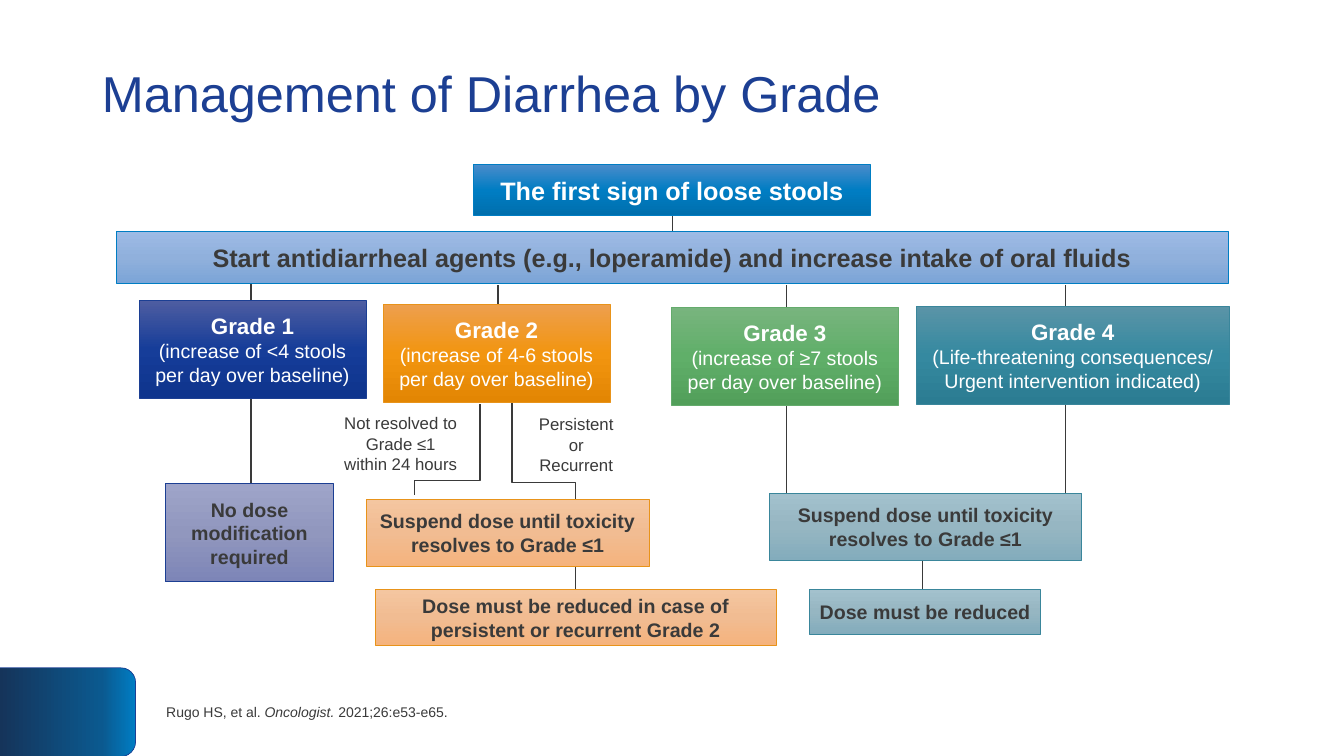
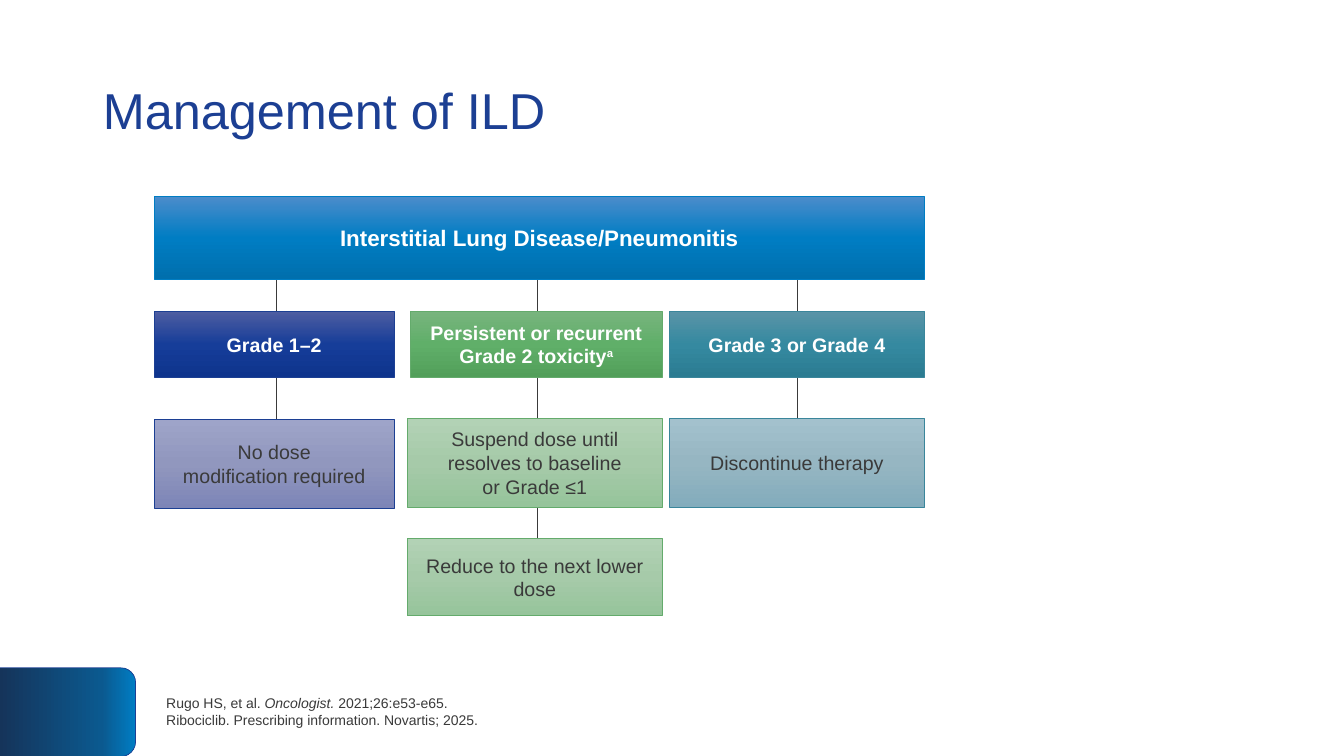
from copy import deepcopy
from dataclasses import dataclass

from lxml.etree import SubElement
from pptx import Presentation
from pptx.dml.color import RGBColor
from pptx.enum.shapes import MSO_CONNECTOR, MSO_SHAPE
from pptx.enum.text import MSO_ANCHOR, MSO_AUTO_SIZE, PP_ALIGN
from pptx.oxml.ns import qn
from pptx.util import Inches, Pt

FONT = "Arial"
HEX = {"title": "1C3F93", "ink": "3A3A3A", "white": "FFFFFF"}

# Each tone: three gradient colours, edge, text
TONES = {
    "blue": ("4B8CCB", "007DC3", "006FAD", "007DC3", HEX["white"]),
    "navy": ("4E5DA1", "163D99", "0E348D", "1C3F93", HEX["white"]),
    "orange": ("ED9F4E", "F29510", "E38603", "E8931A", HEX["white"]),
    "green": ("78B47E", "60AF69", "529F5A", "64AB6C", HEX["white"]),
    "teal": ("5A94A7", "3589A0", "2B7C92", "3A869B", HEX["white"]),
    "pale blue": ("9DBBE5", "90B0DC", "7CA5D7", "007DC3", HEX["ink"]),
    "pale navy": ("9EA4C9", "9197BE", "7D85B7", "1C3F93", HEX["ink"]),
    "pale orange": ("F4C6A0", "F1BC92", "F5B37D", "E8931A", HEX["ink"]),
    "pale green": ("B2D2B5", "A6CAA9", "96C49B", "64AB6C", HEX["ink"]),
    "pale teal": ("A3C1CD", "96B6C2", "83ACBC", "3A869B", HEX["ink"]),
    "band": ("007DC3", "0B598F", "15345A", "1C3F93", HEX["white"]),
}


@dataclass
class Box:
    at: tuple[float, float, float, float]
    tone: str
    text: str
    size: int = 14
    bold: bool = True
    note: str = ""
    sup: str = ""


@dataclass
class Label:
    at: tuple[float, float, float, float]
    text: str


@dataclass
class Wire:
    x: float
    top: float
    end: float


@dataclass
class Elbow:
    start: tuple[float, float]
    end: tuple[float, float]
    bend: float


def place(shape, at: tuple[float, float, float, float]) -> None:
    shape.left, shape.top, shape.width, shape.height = map(Inches, at)


def style(para, size: int, colour: str, bold: bool = False) -> None:
    """Format every run, and give line breaks the same size."""
    for run in para.runs:
        run.font.name = FONT
        run.font.size = Pt(size)
        run.font.bold = bold
        run.font.color.rgb = RGBColor.from_string(colour)
    look = para.runs[0].font
    for gap in para._p.findall(qn("a:br")):
        gap.insert(0, deepcopy(look._rPr))


def paint(shape, tone: str, mid: float = 0.5) -> None:
    *shades, edge, _ = TONES[tone]
    shape.shadow.inherit = False
    fill = shape.fill
    fill.gradient()
    fill.gradient_angle = 270
    stops = shape.element.spPr.find(".//" + qn("a:gsLst"))
    stops.append(deepcopy(stops[0]))
    for stop, spot, shade in zip(fill.gradient_stops, (0, mid, 1), shades):
        stop.position = spot
        stop.color.rgb = RGBColor.from_string(shade)
    shape.line.color.rgb = RGBColor.from_string(edge)
    shape.line.width = Pt(0.5)


def draw_box(slide, box: Box) -> None:
    shape = slide.shapes.add_shape(MSO_SHAPE.RECTANGLE, *map(Inches, box.at))
    paint(shape, box.tone)
    colour = TONES[box.tone][-1]
    frame = shape.text_frame
    frame.word_wrap = True
    frame.vertical_anchor = MSO_ANCHOR.MIDDLE
    frame.text = box.text
    head = frame.paragraphs[0]
    if box.sup:
        run = head.add_run()
        run.text = box.sup
        run.font._element.set("baseline", "30000")
    style(head, box.size, colour, box.bold)
    if box.note:
        note = frame.add_paragraph()
        note.text = box.note
        style(note, 14, colour)
    for para in frame.paragraphs:
        para.alignment = PP_ALIGN.CENTER


def draw_label(slide, label: Label) -> None:
    frame = slide.shapes.add_textbox(*map(Inches, label.at)).text_frame
    frame.word_wrap = False
    frame.auto_size = MSO_AUTO_SIZE.SHAPE_TO_FIT_TEXT
    frame.text = label.text
    frame.paragraphs[0].alignment = PP_ALIGN.CENTER
    style(frame.paragraphs[0], 12, HEX["ink"])


def link(slide, kind, *ends: float):
    line = slide.shapes.add_connector(kind, *map(Inches, ends))
    line.line.color.rgb = RGBColor.from_string(HEX["ink"])
    line.line.width = Pt(1)
    SubElement(line.element.spPr, qn("a:effectLst"))
    return line


def draw_wire(slide, wire: Wire) -> None:
    link(slide, MSO_CONNECTOR.STRAIGHT, wire.x, wire.top, wire.x, wire.end)


def draw_elbow(slide, elbow: Elbow) -> None:
    """Leave downwards, so turn the level-first connector a quarter."""
    (x1, y1), (x2, y2) = elbow.start, elbow.end
    mid_x, mid_y = (x1 + x2) / 2, (y1 + y2) / 2
    half, rise = (y2 - y1) / 2, abs(x2 - x1) / 2
    right = x2 > x1
    if right:
        half = -half
    line = link(slide, MSO_CONNECTOR.ELBOW,
                mid_x - half, mid_y - rise, mid_x + half, mid_y + rise)
    form = line.element.spPr
    form.find(qn("a:xfrm")).set("rot", str((270 if right else 90) * 60000))
    guide = SubElement(form.find(".//" + qn("a:avLst")), qn("a:gd"))
    guide.set("name", "adj1")
    guide.set("fmla", f"val {round(elbow.bend * 100000)}")


DRAW = {Box: draw_box, Label: draw_label, Wire: draw_wire, Elbow: draw_elbow}


def add_slide(deck, title: str, at: tuple[float, float, float, float],
              parts: list, source: str = "") -> None:
    slide = deck.slides.add_slide(deck.slide_layouts[5])

    # Corner band
    band = slide.shapes.add_shape(MSO_SHAPE.ROUND_2_SAME_RECTANGLE,
                                  *map(Inches, (0.23, 6.39, 0.88, 1.35)))
    band.rotation = 90
    paint(band, "band", 0.25)

    # Title
    head = slide.shapes.title
    place(head, at)
    frame = head.text_frame
    frame.text = title
    frame.word_wrap = True
    frame.auto_size = MSO_AUTO_SIZE.NONE
    frame.vertical_anchor = MSO_ANCHOR.MIDDLE
    para = frame.paragraphs[0]
    para.alignment = PP_ALIGN.LEFT
    para.line_spacing = 0.9
    style(para, 36, HEX["title"])

    # Flow chart
    for part in parts:
        DRAW[type(part)](slide, part)

    # Source line
    foot = slide.shapes.add_textbox(*map(Inches, (1.55, 6.62, 11.65, 0.88)))
    frame = foot.text_frame
    frame.word_wrap = True
    frame.vertical_anchor = MSO_ANCHOR.MIDDLE
    para = frame.paragraphs[0]
    for text in ("Rugo HS, et al. ", "Oncologist. ", "2021;26:e53-e65."):
        para.add_run().text = text
    para.runs[1].font.italic = True
    if source:
        para.add_line_break()
        para.add_run().text = source
    style(para, 10, HEX["ink"])


def grade(num: int, at: tuple[float, float, float], tone: str, note: str) -> Box:
    return Box((*at, 0.97), tone, f"Grade {num}", 16, note=note)


def stools(count: str) -> str:
    return f"(increase of {count} stools\vper day over baseline)"


PAUSE = "Suspend dose until toxicity resolves to Grade ≤1"

GUT = [
    # Lines
    Wire(6.67, 2.14, 2.3),
    Wire(2.49, 2.82, 4.8),
    Wire(4.94, 2.83, 3.4),
    Wire(7.8, 2.83, 4.91),
    Wire(10.57, 2.83, 4.91),
    Wire(9.15, 5.39, 5.85),
    Elbow((4.76, 4.01), (4.11, 4.91), 0.84),
    Elbow((5.08, 3.95), (5.71, 5.85), 0.44),
    # First steps
    Box((4.7, 1.63, 3.93, 0.51), "blue", "The first sign of loose stools", 18),
    Box((1.15, 2.3, 11.03, 0.51), "pale blue",
        "Start antidiarrheal agents (e.g., loperamide) and increase intake of oral fluids", 18),
    # Grades
    grade(1, (1.38, 2.98, 2.25), "navy", stools("<4")),
    grade(2, (3.8, 3.02, 2.25), "orange", stools("4-6")),
    grade(3, (6.66, 3.05, 2.25), "green", stools("≥7")),
    grade(4, (9.09, 3.04, 3.1), "teal",
          "(Life-threatening consequences/\vUrgent intervention indicated)"),
    # Branch labels
    Label((3.31, 4.05, 1.33, 0.71), "Not resolved to\vGrade ≤1\vwithin 24 hours"),
    Label((5.24, 4.06, 0.95, 0.71), "Persistent\vor\vRecurrent"),
    # Actions
    Box((1.64, 4.8, 1.67, 0.97), "pale navy", "No dose modification required"),
    Box((3.63, 4.95, 2.81, 0.67), "pale orange", PAUSE),
    Box((3.72, 5.85, 3.98, 0.55), "pale orange",
        "Dose must be reduced in case of persistent or recurrent Grade 2"),
    Box((7.63, 4.89, 3.1, 0.67), "pale teal", PAUSE),
    Box((8.03, 5.85, 2.29, 0.44), "pale teal", "Dose must be reduced"),
]

LUNG = [
    # Lines
    Wire(2.74, 2.75, 4.54),
    Wire(5.33, 2.75, 5.7),
    Wire(7.91, 2.75, 4.76),
    # Heading and grades
    Box((1.53, 1.95, 7.64, 0.82), "blue", "Interstitial Lung Disease/Pneumonitis", 16),
    Box((1.53, 3.09, 2.38, 0.65), "navy", "Grade 1–2"),
    Box((4.07, 3.09, 2.5, 0.65), "green", "Persistent or recurrent Grade 2 toxicity", sup="a"),
    Box((6.64, 3.09, 2.53, 0.65), "teal", "Grade 3 or Grade 4"),
    # Actions
    Box((1.53, 4.16, 2.38, 0.88), "pale navy", "No dose\vmodification required", bold=False),
    Box((4.04, 4.15, 2.53, 0.88), "pale green",
        "Suspend dose until\vresolves to baseline\vor Grade ≤1", bold=False),
    Box((4.04, 5.34, 2.53, 0.77), "pale green", "Reduce to the next lower dose", bold=False),
    Box((6.64, 4.15, 2.53, 0.88), "pale teal", "Discontinue therapy", bold=False),
]


def main() -> None:
    deck = Presentation()
    deck.slide_width, deck.slide_height = Inches(13.33), Inches(7.5)
    add_slide(deck, "Management of Diarrhea by Grade", (0.91, 0.41, 11.5, 1.08), GUT)
    add_slide(deck, "Management of ILD", (0.92, 0.4, 11.5, 1.45), LUNG,
              "Ribociclib. Prescribing information. Novartis; 2025.")
    deck.save("out.pptx")


if __name__ == "__main__":
    main()
